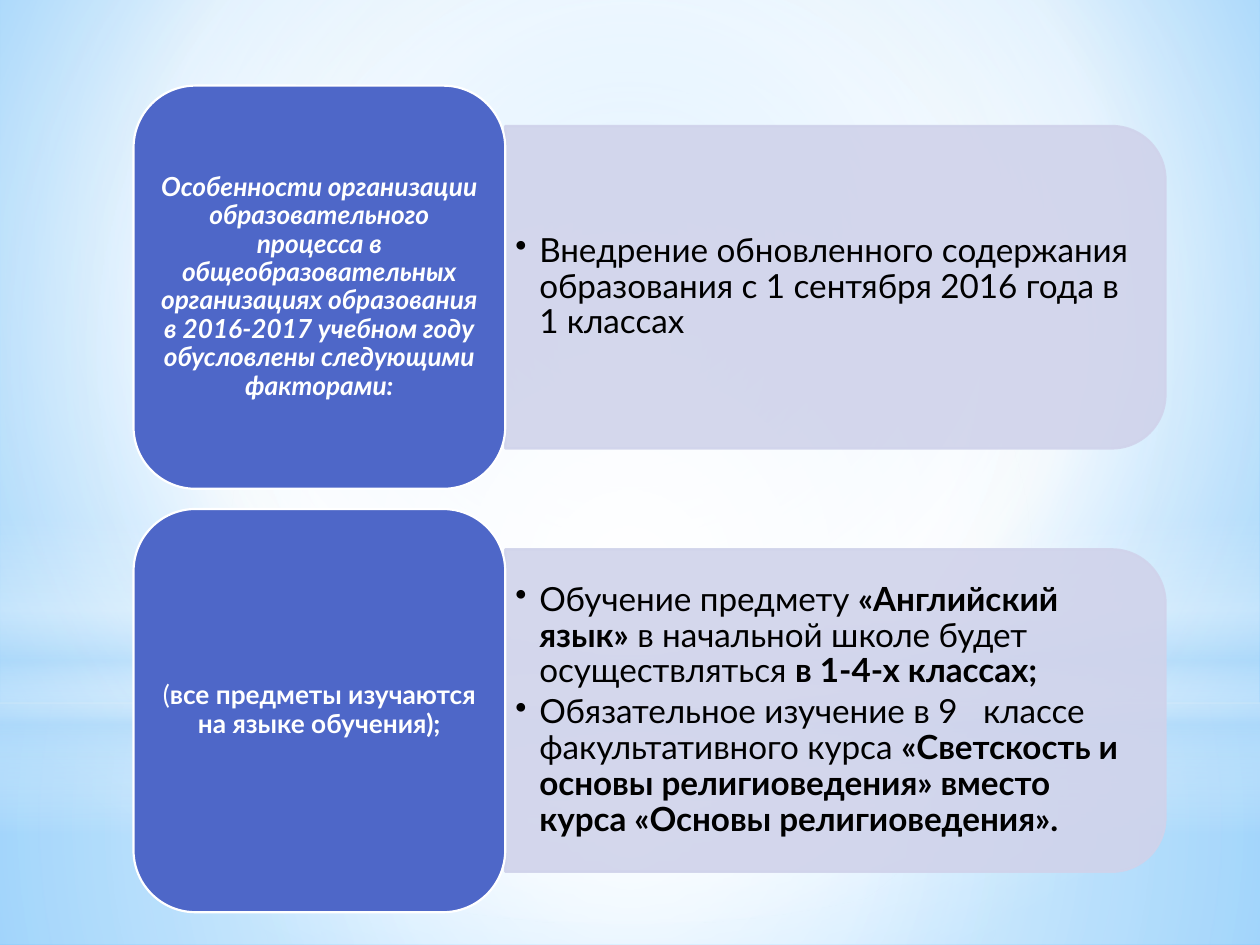
import pptx
import pptx.util
import pptx.dml.color
import pptx.enum.shapes
import pptx.enum.text
import pptx.oxml
import pptx.oxml.ns
from lxml import etree

Inch, Pt = pptx.util.Inches, pptx.util.Pt
Kind = pptx.enum.shapes.MSO_SHAPE
Align = pptx.enum.text.PP_ALIGN
qn = pptx.oxml.ns.qn

# Content: each row has a card and bullets; a run is (text, style)
ROWS = [
    {"card": [[("Особенности организации образовательного процесса в "
                "общеобразовательных организациях образования в 2016-2017 "
                "учебном году обусловлены следующими факторами:", "bi")]],
     "list": [[("Внедрение обновленного содержания образования "
                "с 1 сентября 2016 года в 1 классах", "")]]},
    {"card": [[("(", ""),
               ("все предметы изучаются на языке обучения);", "b")]],
     "list": [[("Обучение предмету ", ""),
               ("«Английский язык»", "b"),
               (" в начальной школе будет осуществляться ", ""),
               ("в 1-4-х классах;", "b")],
              [("Обязательное изучение в 9   классе факультативного курса ", ""),
               ("«Светскость и основы религиоведения» вместо курса "
                "«Основы религиоведения».", "b")]]},
]

# Gradients: stops are (position, colour, opacity), all in percent
SKY, MID = "B4DCFA", (50, 50, 50, 50)
BACK = [(0, "9ED5FF", 100), (60, "FFFFFF", 100), (100, "5BB9FF", 100)]
GLOWS = [
    (Kind.RECTANGLE, 5.58, 1.92, MID,
     [(0, "FFFFFF", 91), (37, "FFFFFF", 76), (100, SKY, 79)]),
    (Kind.RECTANGLE, 0, 5.58, MID,
     [(0, "FFFFFF", 89), (48, "FFFFFF", 62), (100, SKY, 79)]),
    (Kind.RECTANGLE, 4.12, 2.5, None,
     [(0, "FFFFFF", 0), (29, "FFFFFF", 30), (45, SKY, 40),
      (55, "FFFFFF", 26), (65, SKY, 60), (100, "FFFFFF", 0)]),
    (Kind.OVAL, 1.75, 5.58, MID,
     [(0, "FFFFFF", 100), (56, "FFFFFF", 0)]),
]

# Grid, in inches
WIDE, HIGH = 10, 7.5
LEFT, TOP, STEP = 1.06, 0.68, 3.36
CARD_W, CARD_H = 2.95, 3.2
PANEL_W, PANEL_H = 5.24, 2.56
INSET = 0.145
FONT = "Lato"


def tint(code):
    return pptx.dml.color.RGBColor.from_string(code)


def fade(color, share):
    """Set the opacity of a colour node, in percent."""
    etree.SubElement(color, qn("a:alpha"), val=str(share * 1000))


def blend(owner, stops, focus=None):
    """Fill with a gradient: circular around focus, else top to bottom."""
    node = owner.find(".//" + qn("a:gradFill"))
    for child in list(node):
        node.remove(child)
    group = etree.SubElement(node, qn("a:gsLst"))
    for pos, code, share in stops:
        stop = etree.SubElement(group, qn("a:gs"), pos=str(pos * 1000))
        fade(etree.SubElement(stop, qn("a:srgbClr"), val=code), share)
    if focus:
        ring = etree.SubElement(node, qn("a:path"), path="circle")
        sides = {s: str(v * 1000) for s, v in zip("ltrb", focus)}
        etree.SubElement(ring, qn("a:fillToRect"), **sides)
    else:
        etree.SubElement(node, qn("a:lin"), ang="5400000", scaled="0")


def draw(slide, kind, x, y, w, h, fill=None, line=None):
    shape = slide.shapes.add_shape(kind, Inch(x), Inch(y), Inch(w), Inch(h))
    shape.shadow.inherit = False
    if fill:
        shape.fill.solid()
        shape.fill.fore_color.rgb = tint(fill)
    if line:
        shape.line.color.rgb = tint(line)
        shape.line.width = Pt(1.25)
    else:
        shape.line.fill.background()
    return shape


def write(slide, x, y, w, h, paras, size, code, pad, gap, dots=False):
    box = slide.shapes.add_textbox(Inch(x), Inch(y), Inch(w), Inch(h))
    frame = box.text_frame
    frame.word_wrap = True
    frame.vertical_anchor = pptx.enum.text.MSO_ANCHOR.MIDDLE
    frame.margin_left = frame.margin_right = Inch(pad)
    frame.margin_top = frame.margin_bottom = Inch(pad / 2)
    for i, runs in enumerate(paras):
        para = frame.add_paragraph() if i else frame.paragraphs[0]
        para.line_spacing = 0.9
        para.space_after = Pt(size * gap)
        para.alignment = Align.LEFT if dots else Align.CENTER
        if dots:
            para.level = 1
            props = para._p.get_or_add_pPr()
            props.set("marL", str(Inch(0.19)))
            props.set("indent", str(-Inch(0.19)))
            etree.SubElement(props, qn("a:buChar"), char="•")
        for text, style in runs:
            run = para.add_run()
            run.text = text
            run.font.name, run.font.size = FONT, Pt(size)
            run.font.bold, run.font.italic = "b" in style, "i" in style
            run.font.color.rgb = tint(code)


def main():
    deck = pptx.Presentation()
    deck.slide_width, deck.slide_height = Inch(WIDE), Inch(HIGH)
    slide = deck.slides.add_slide(deck.slide_layouts[6])

    # Background and soft light
    slide.background.fill.gradient()
    blend(slide._element, BACK, (20, 10, 20, 60))
    for kind, y, h, focus, stops in GLOWS:
        glow = draw(slide, kind, 0, y, WIDE, h)
        glow.fill.gradient()
        blend(glow._element, stops, focus)

    # Rows: panel with bullets, then card
    edge = LEFT + CARD_W
    for i, row in enumerate(ROWS):
        y = TOP + i * STEP
        mid = y + CARD_H / 2
        panel = draw(slide, Kind.ROUND_2_SAME_RECTANGLE,
                     edge + (PANEL_W - PANEL_H) / 2, mid - PANEL_W / 2,
                     PANEL_H, PANEL_W, "D0D3EB", "D0D3EB")
        panel.rotation = 90
        for color in panel._element.spPr.iter(qn("a:srgbClr")):
            fade(color, 90)
        write(slide, edge, mid - 1.155, PANEL_W - 0.12, 2.31,
              row["list"], 19, "000000", 0.08, 0.15, True)
        draw(slide, Kind.ROUNDED_RECTANGLE, LEFT, y, CARD_W, CARD_H,
             "4E67C8", "FFFFFF")
        write(slide, LEFT + INSET, y + INSET, CARD_W - 2 * INSET,
              CARD_H - 2 * INSET, row["card"], 15, "FFFFFF", 0.06, 0.35)

    deck.save("out.pptx")


if __name__ == "__main__":
    main()
